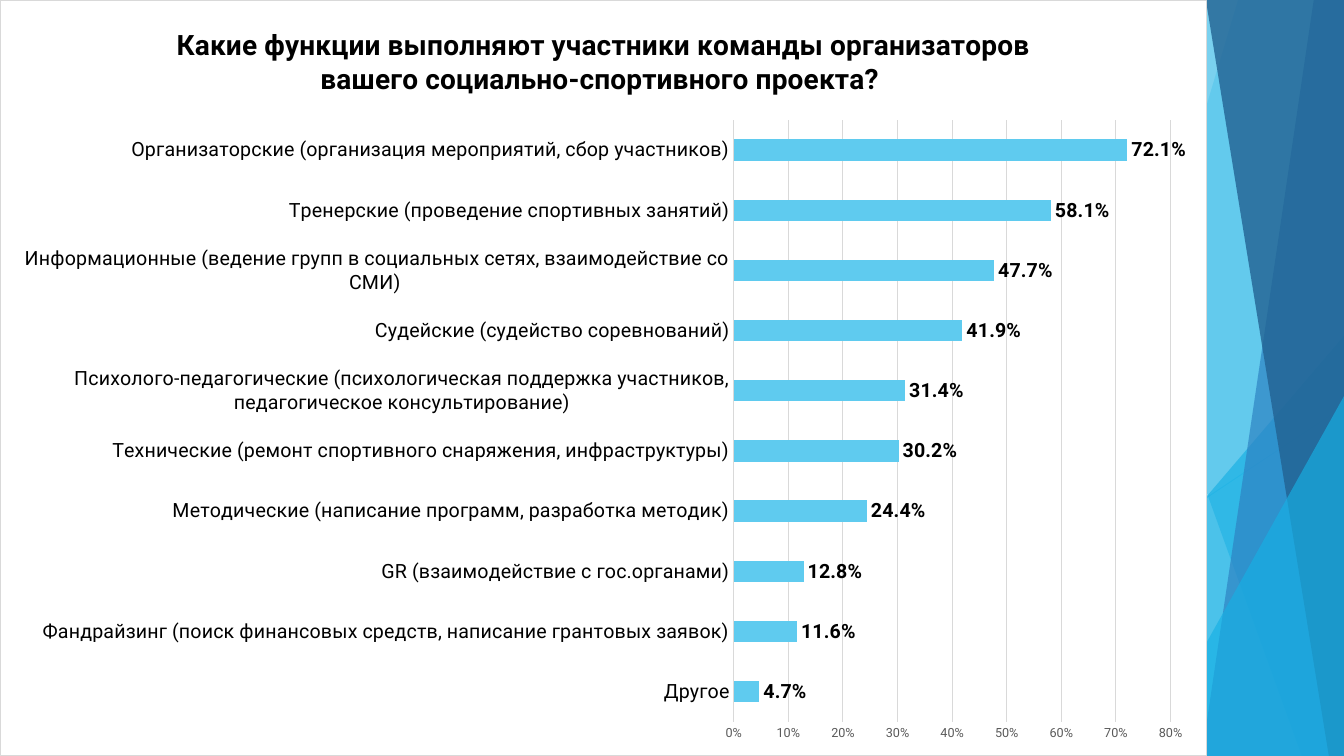
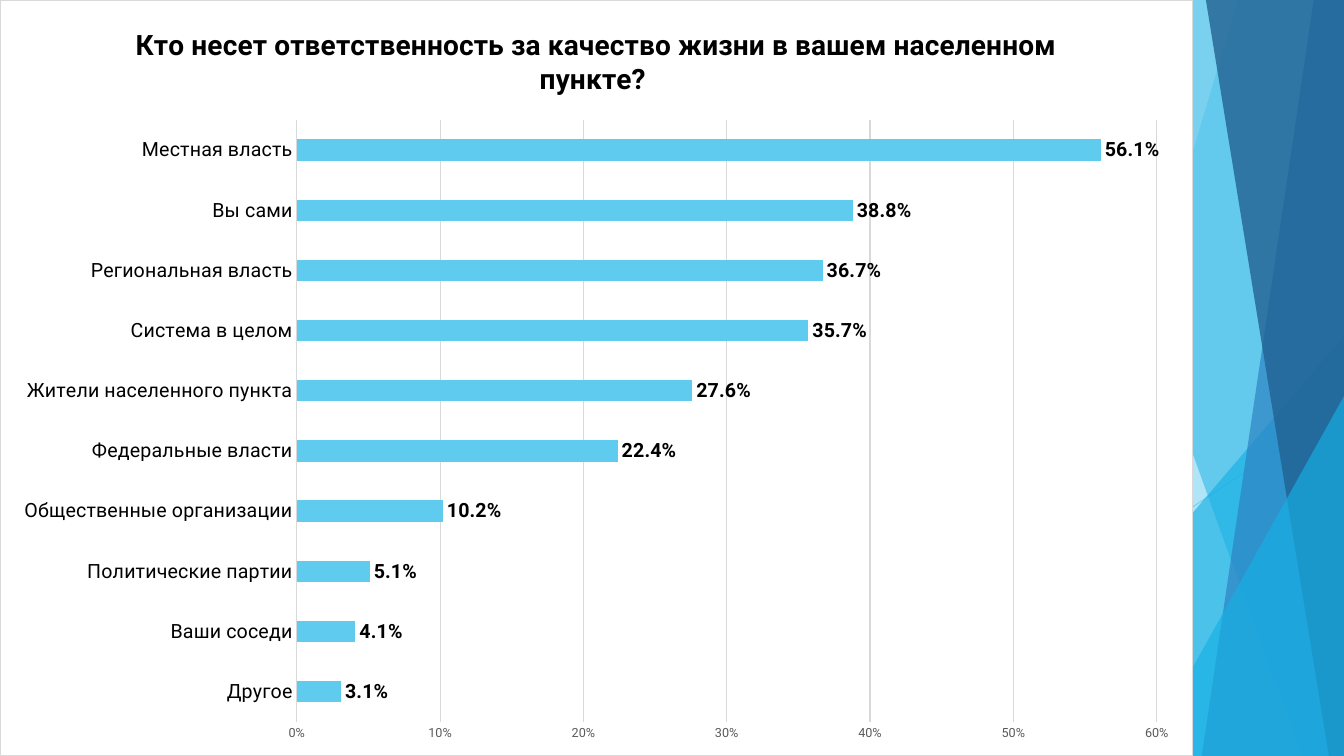
from dataclasses import dataclass

import lxml.etree
import pptx
import pptx.chart.axis
import pptx.chart.chart
import pptx.chart.data
import pptx.dml.color
import pptx.enum.chart
import pptx.enum.shapes
import pptx.oxml
import pptx.oxml.ns
import pptx.presentation
import pptx.slide
import pptx.text.text
import pptx.util

COLOURS = {
    "sky": "5FCBEF",
    "cyan": "17B0E4",
    "blue": "2E83C3",
    "navy": "226292",
    "grid": "D9D9D9",
    "scale": "595959",
    "text": "000000",
    "paper": "FFFFFF",
}
FONT = "Roboto"
WIDTH = pptx.util.Inches(13.33)
HEIGHT = pptx.util.Inches(7.5)
HAIRLINE = pptx.util.Pt(0.75)
qn = pptx.oxml.ns.qn


@dataclass(frozen=True)
class Facet:
    """Band between a slanted left edge and the right side of the slide.

    Top and bottom are the edge's ends, in percent of the slide's width.
    """
    top: float
    bottom: float
    colour: str
    opacity: int


@dataclass(frozen=True)
class Wedge:
    """Right triangle in the lower right corner, in percent of the slide."""
    left: float
    top: float
    colour: str
    opacity: int


@dataclass(frozen=True)
class Survey:
    question: str
    answers: dict[str, float]
    width: float  # percent of the slide's width
    maximum: float


DECORATION = (
    Facet(92.12, 75.32, "sky", 36),
    Facet(78.77, 88.75, "sky", 20),
    Wedge(73.29, 44.4, "cyan", 66),
    Facet(76.59, 96.85, "cyan", 50),
    Facet(97.75, 89.42, "blue", 70),
    Facet(89.72, 98.87, "navy", 80),
    Wedge(85.07, 52.4, "cyan", 66),
)

SURVEYS = (
    Survey(
        "Какие функции выполняют участники команды организаторов "
        "вашего социально-спортивного проекта? ",
        {
            "Другое": 0.047,
            "Фандрайзинг (поиск финансовых средств, написание грантовых заявок)": 0.116,
            "GR (взаимодействие с гос.органами)": 0.128,
            "Методические (написание программ, разработка методик)": 0.244,
            "Технические (ремонт спортивного снаряжения, инфраструктуры)": 0.302,
            "Психолого-педагогические (психологическая поддержка участников, "
            "педагогическое консультирование)": 0.314,
            "Судейские (судейство соревнований)": 0.419,
            "Информационные (ведение групп в социальных сетях, "
            "взаимодействие со СМИ) ": 0.477,
            "Тренерские (проведение спортивных занятий)": 0.581,
            "Организаторские (организация мероприятий, сбор участников)": 0.721,
        },
        width=89.8,
        maximum=0.8,
    ),
    Survey(
        "Кто несет ответственность за качество жизни в вашем населенном пункте? ",
        {
            "Другое": 0.031,
            "Ваши соседи": 0.041,
            "Политические партии": 0.051,
            "Общественные организации": 0.102,
            "Федеральные власти": 0.224,
            "Жители населенного пункта": 0.276,
            "Система в целом": 0.357,
            "Региональная власть": 0.367,
            "Вы сами": 0.388,
            "Местная власть": 0.561,
        },
        width=88.75,
        maximum=0.6,
    ),
)


def rgb(colour: str) -> pptx.dml.color.RGBColor:
    return pptx.dml.color.RGBColor.from_string(COLOURS[colour])


def across(percent: float) -> int:
    return round(WIDTH * percent / 100)


def down(percent: float) -> int:
    return round(HEIGHT * percent / 100)


def set_opacity(properties: lxml.etree.ElementBase, percent: int) -> None:
    """Make the first colour among the shape properties translucent."""
    colour = properties.find(".//" + qn("a:srgbClr"))
    lxml.etree.SubElement(colour, qn("a:alpha"), val=str(percent * 1000))


def style_font(font: pptx.text.text.Font, size: int, colour: str = "text",
               bold: bool = False) -> None:
    font.name = FONT
    font.size = pptx.util.Pt(size)
    font.bold = bold
    font.color.rgb = rgb(colour)


def draw_ray(slide: pptx.slide.Slide) -> None:
    ray = slide.shapes.add_connector(
        pptx.enum.shapes.MSO_CONNECTOR.STRAIGHT,
        WIDTH, down(53.73), across(60.92), HEIGHT)
    ray.line.color.rgb = rgb("sky")
    ray.line.width = HAIRLINE
    properties = ray._element.spPr
    set_opacity(properties, 70)
    lxml.etree.SubElement(properties, qn("a:effectLst"))


def draw_decoration(slide: pptx.slide.Slide) -> None:
    draw_ray(slide)
    for part in DECORATION:
        if isinstance(part, Facet):
            outline = slide.shapes.build_freeform(across(part.top), 0)
            outline.add_line_segments(
                [(WIDTH, 0), (WIDTH, HEIGHT), (across(part.bottom), HEIGHT)])
            pane = outline.convert_to_shape()
        else:
            left, top = across(part.left), down(part.top)
            pane = slide.shapes.add_shape(
                pptx.enum.shapes.MSO_SHAPE.ISOSCELES_TRIANGLE,
                left, top, WIDTH - left, HEIGHT - top)
            pane.adjustments[0] = 1
        pane.shadow.inherit = False
        pane.fill.solid()
        pane.fill.fore_color.rgb = rgb(part.colour)
        pane.line.fill.background()
        set_opacity(pane._element.spPr, part.opacity)


def frame_chart(chart: pptx.chart.chart.Chart) -> None:
    """Give the chart area its white fill and thin border."""
    frame = pptx.oxml.parse_xml(
        f'<c:spPr {pptx.oxml.ns.nsdecls("c", "a")}>'
        f'<a:solidFill><a:srgbClr val="{COLOURS["paper"]}"/></a:solidFill>'
        f'<a:ln w="{HAIRLINE}"><a:solidFill>'
        f'<a:srgbClr val="{COLOURS["grid"]}"/></a:solidFill></a:ln></c:spPr>')
    chart._chartSpace.find(qn("c:chart")).addnext(frame)


def style_axes(chart: pptx.chart.chart.Chart, maximum: float) -> None:
    answers, shares = chart.category_axis, chart.value_axis
    for axis in (answers, shares):
        axis.major_tick_mark = pptx.enum.chart.XL_TICK_MARK.NONE
        axis.minor_tick_mark = pptx.enum.chart.XL_TICK_MARK.NONE
    style_font(answers.tick_labels.font, 14)
    style_font(shares.tick_labels.font, 9, "scale")
    shares.minimum_scale, shares.maximum_scale = 0, maximum
    shares.major_unit = 0.1
    shares.tick_labels.number_format = "0%"
    shares.tick_labels.number_format_is_linked = False
    shares.format.line.fill.background()
    shares.has_major_gridlines = True
    for line in (answers.format.line, shares.major_gridlines.format.line):
        line.color.rgb = rgb("grid")
        line.width = HAIRLINE


def add_survey_chart(slide: pptx.slide.Slide, survey: Survey) -> None:
    results = pptx.chart.data.CategoryChartData(number_format="0.0%")
    results.categories = list(survey.answers)
    results.add_series("Series 1", list(survey.answers.values()))
    chart = slide.shapes.add_chart(
        pptx.enum.chart.XL_CHART_TYPE.BAR_CLUSTERED,
        0, 0, across(survey.width), HEIGHT, results).chart
    style_font(chart.font, 10)
    frame_chart(chart)
    chart.has_legend = False

    chart.has_title = True
    question = chart.chart_title.text_frame
    question.text = survey.question
    style_font(question.paragraphs[0].runs[0].font, 20, bold=True)
    chart.chart_title.include_in_layout = False

    style_axes(chart, survey.maximum)
    plot = chart.plots[0]
    plot.vary_by_categories = False
    plot.gap_width = 182
    bars = plot.series[0]
    bars.format.fill.solid()
    bars.format.fill.fore_color.rgb = rgb("sky")

    plot.has_data_labels = True
    labels = plot.data_labels
    labels.show_value = True
    labels.position = pptx.enum.chart.XL_LABEL_POSITION.OUTSIDE_END
    labels.number_format = "###0.0%"
    labels.number_format_is_linked = False
    style_font(labels.font, 14, bold=True)


def main() -> None:
    deck = pptx.Presentation()
    deck.slide_width, deck.slide_height = WIDTH, HEIGHT
    blank = deck.slide_layouts[6]
    for survey in SURVEYS:
        slide = deck.slides.add_slide(blank)
        draw_decoration(slide)
        add_survey_chart(slide, survey)
    deck.save("out.pptx")


if __name__ == "__main__":
    main()
